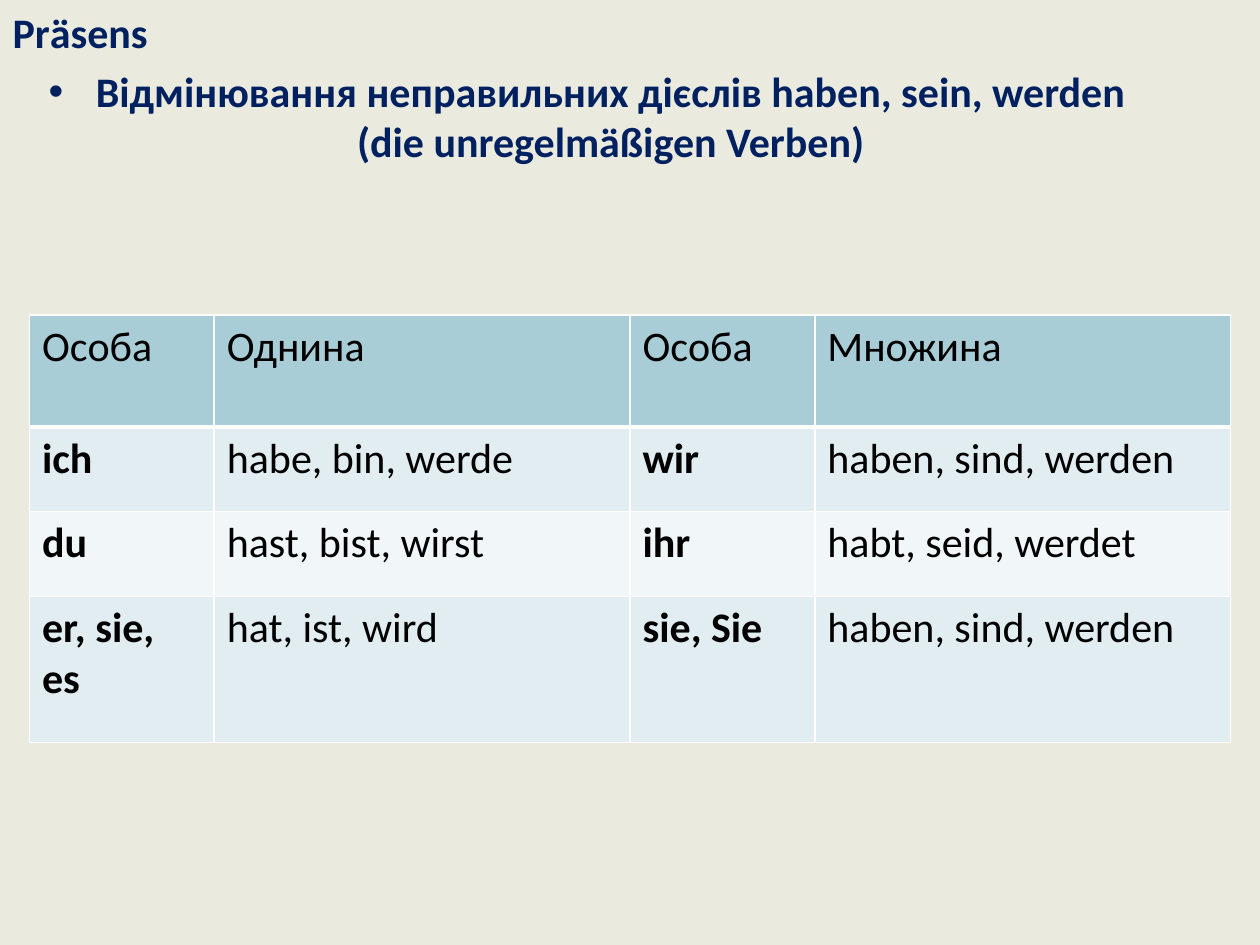
from lxml import etree
from pptx import Presentation
from pptx.dml.color import RGBColor
from pptx.enum import text as t
from pptx.oxml.ns import qn
from pptx.util import Pt

# Content
HEADING = "Prӓsens"
TOPIC = "Відмінювання неправильних дієслів haben, sein, werden (die unregelmäßigen Verben)"
CONJUGATION = [
    ("Особа", "Однина", "Особа", "Множина"),
    ("ich", "habe, bin, werde", "wir", "haben, sind, werden"),
    ("du", "hast, bist, wirst", "ihr", "habt, seid, werdet"),
    ("er, sie, es", "hat, ist, wird", "sie, Sie", "haben, sind, werden"),
]

# Format
FONT, SIZE = "Calibri", 24
NAVY, BLACK, WHITE, SAND = "002060", "000000", "FFFFFF", "EAEBDE"
HEADER_FILL, BAND_FILLS = "A8CDD7", ("E1EDF0", "F1F6F8")
COLUMN_WIDTHS = (105.6, 237.6) * 2
ROW_HEIGHTS = (64, 48.4, 48.4, 83.4)
BULLET_INDENT = 27


def color(hex_code):
    return RGBColor.from_string(hex_code)


def paint(fill, hex_code):
    fill.solid()
    fill.fore_color.rgb = color(hex_code)


def write(frame, words, ink=BLACK, bold=False, align=t.PP_ALIGN.LEFT):
    paragraph = frame.paragraphs[0]
    paragraph.alignment = align
    run = paragraph.add_run()
    run.text = words
    run.font.name, run.font.size, run.font.bold = FONT, Pt(SIZE), bold
    run.font.color.rgb = color(ink)
    return paragraph


def add_bullet(paragraph, indent):
    props = paragraph._p.get_or_add_pPr()
    props.set("marL", str(Pt(indent)))
    props.set("indent", str(-Pt(indent)))
    etree.SubElement(props, qn("a:buFont")).set("typeface", "Arial")
    etree.SubElement(props, qn("a:buChar")).set("char", "•")


def add_border(cell, side, width):
    line = etree.SubElement(cell._tc.get_or_add_tcPr(), qn(f"a:ln{side}"), w=str(Pt(width)))
    fill = etree.SubElement(line, qn("a:solidFill"))
    etree.SubElement(fill, qn("a:srgbClr"), val=WHITE)


def place(shape, left, top, width, height):
    shape.left, shape.top, shape.width, shape.height = map(Pt, (left, top, width, height))


prs = Presentation()
prs.slide_width, prs.slide_height = Pt(720), Pt(540)
slide = prs.slides.add_slide(prs.slide_layouts[5])
paint(slide.background.fill, SAND)

# Heading
heading = slide.shapes.title
place(heading, 0, 0, 101.5, 36)
heading.text_frame.word_wrap = False
heading.text_frame.auto_size = t.MSO_AUTO_SIZE.SHAPE_TO_FIT_TEXT
heading.text_frame.vertical_anchor = t.MSO_ANCHOR.TOP
write(heading.text_frame, HEADING, ink=NAVY, bold=True)

# Topic
topic = slide.shapes.add_textbox(Pt(11.5), Pt(33.8), Pt(648), Pt(356.4))
topic.text_frame.word_wrap = True
topic_line = write(topic.text_frame, TOPIC, ink=NAVY, bold=True, align=t.PP_ALIGN.CENTER)
topic_line.space_before = Pt(SIZE * 0.2)
add_bullet(topic_line, BULLET_INDENT)

# Conjugation table
table = slide.shapes.add_table(
    len(ROW_HEIGHTS), len(COLUMN_WIDTHS), Pt(16.8), Pt(180),
    Pt(sum(COLUMN_WIDTHS)), Pt(sum(ROW_HEIGHTS))).table
for column, width in zip(table.columns, COLUMN_WIDTHS):
    column.width = Pt(width)
for r, (forms, height) in enumerate(zip(CONJUGATION, ROW_HEIGHTS)):
    table.rows[r].height = Pt(height)
    is_header = r == 0
    for c, form in enumerate(forms):
        cell = table.cell(r, c)
        write(cell.text_frame, form, bold=not is_header and c % 2 == 0)
        for side in "LRTB":
            thick = (is_header and side == "B") or (r == 1 and side == "T")
            add_border(cell, side, 3 if thick else 1)
        paint(cell.fill, HEADER_FILL if is_header else BAND_FILLS[(r - 1) % 2])

prs.save("out.pptx")
